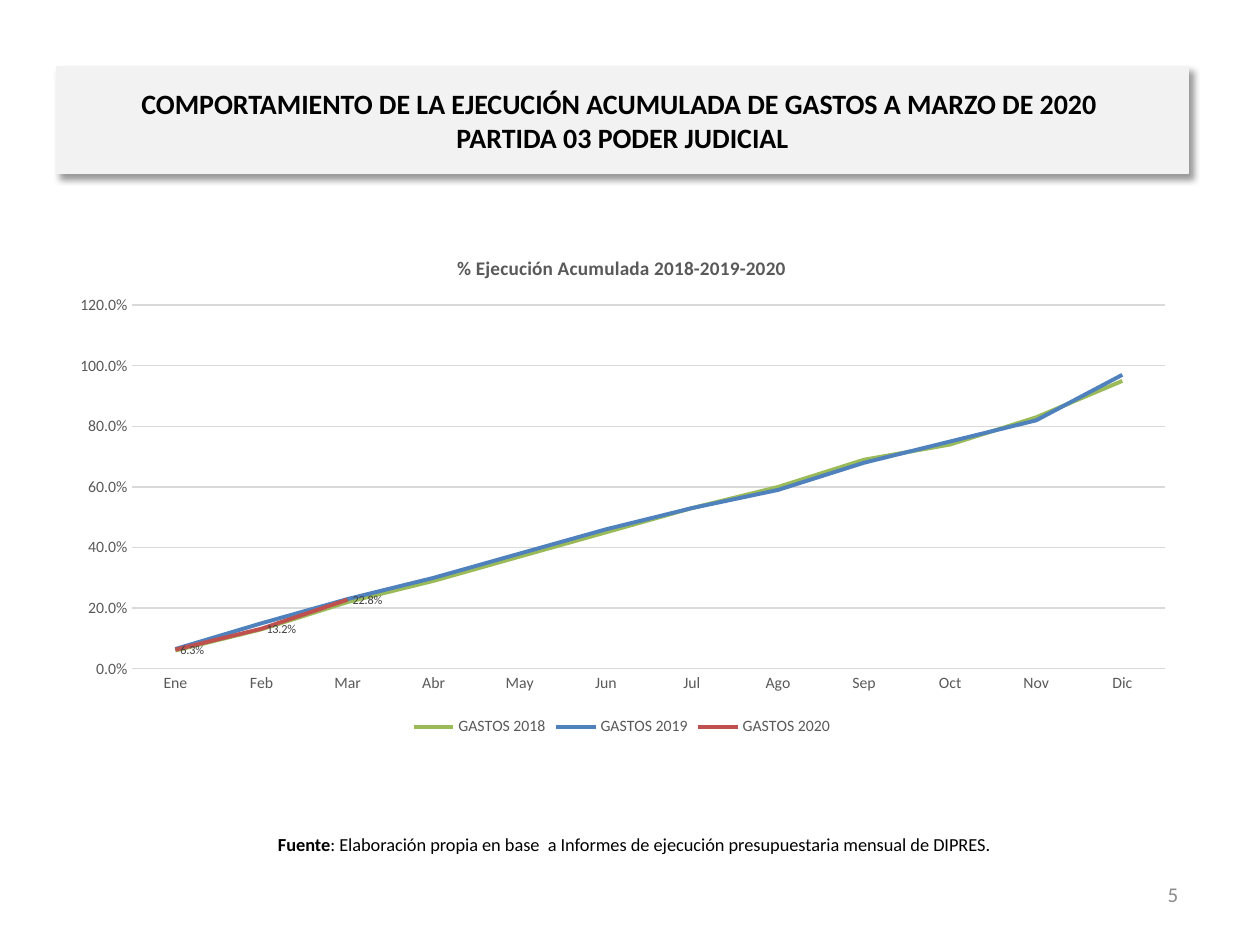
from lxml import etree
from pptx import Presentation
from pptx import util as u
from pptx.chart.data import CategoryChartData
from pptx.dml.color import RGBColor
from pptx.enum import chart as ch, shapes, text
from pptx.oxml import parse_xml
from pptx.oxml.ns import nsdecls


def color(value):
    return RGBColor.from_string(value)


def style(font, size, value, bold=False):
    font.name = "Calibri"
    font.size = u.Pt(size)
    font.bold = bold
    font.color.rgb = color(value)


prs = Presentation()
prs.slide_width, prs.slide_height = u.Inches(10), u.Inches(7.5)
slide = prs.slides.add_slide(prs.slide_layouts[6])

banner = slide.shapes.add_shape(
    shapes.MSO_SHAPE.RECTANGLE, u.Inches(0.45), u.Inches(0.53), u.Inches(8.98), u.Inches(0.85))
banner.shadow.inherit = False
banner.fill.solid()
banner.fill.fore_color.rgb = color("F2F2F2")
banner.line.color.rgb = color("F2F2F2")
banner.line.width = u.Pt(0.75)
effects = banner.fill._xPr.find("{*}effectLst")
effects.append(parse_xml(
    f'<a:outerShdw {nsdecls("a")} blurRad="{u.Pt(4)}" dist="{u.Pt(3)}" dir="2700000" algn="tl" rotWithShape="0">'
    '<a:srgbClr val="000000"><a:alpha val="40000"/></a:srgbClr></a:outerShdw>'))
banner.text_frame.word_wrap = True
banner.text_frame.vertical_anchor = text.MSO_ANCHOR.MIDDLE
heading = banner.text_frame.paragraphs[0]
heading.alignment = text.PP_ALIGN.CENTER
first_line = heading.add_run()
first_line.text = "COMPORTAMIENTO DE LA EJECUCIÓN ACUMULADA DE GASTOS A MARZO DE 2020 "
heading.add_line_break()
second_line = heading.add_run()
second_line.text = "PARTIDA 03 PODER JUDICIAL"
for line in (first_line, second_line):
    style(line.font, 16, "000000", True)

months = ["Ene", "Feb", "Mar", "Abr", "May", "Jun", "Jul", "Ago", "Sep", "Oct", "Nov", "Dic"]
spending = [
    ("GASTOS 2018", "9BBB59",
     [0.06, 0.13, 0.22, 0.29, 0.37, 0.45, 0.53, 0.6, 0.69, 0.74, 0.83, 0.95]),
    ("GASTOS 2019", "4F81BD",
     [0.065, 0.15, 0.23, 0.3, 0.38, 0.46, 0.53, 0.59, 0.68, 0.75, 0.82, 0.97]),
    ("GASTOS 2020", "C0504D", [0.063, 0.132, 0.228] + [None] * 9),
]
data = CategoryChartData(number_format="0.0%")
data.categories = months
for name, _, values in spending:
    data.add_series(name, values)
execution = slide.shapes.add_chart(
    ch.XL_CHART_TYPE.LINE, u.Inches(0.45), u.Inches(1.86), u.Inches(8.97), u.Inches(4.02), data).chart
style(execution.font, 10, "000000")

execution.has_title = True
chart_title = execution.chart_title.text_frame.paragraphs[0].add_run()
chart_title.text = "% Ejecución Acumulada 2018-2019-2020"
style(chart_title.font, 11, "595959", True)
execution.chart_title.include_in_layout = False

execution.has_legend = True
execution.legend.position = ch.XL_LEGEND_POSITION.BOTTOM
execution.legend.include_in_layout = False
style(execution.legend.font, 9, "595959")

for axis in (execution.category_axis, execution.value_axis):
    axis.major_tick_mark = axis.minor_tick_mark = ch.XL_TICK_MARK.NONE
    style(axis.tick_labels.font, 9, "595959")
percent = execution.value_axis
percent.minimum_scale, percent.maximum_scale, percent.major_unit = 0, 1.2, 0.2
percent.tick_labels.number_format = "0.0%"
percent.tick_labels.number_format_is_linked = False
percent.format.line.fill.background()
for rule in (execution.category_axis.format.line, percent.major_gridlines.format.line):
    rule.color.rgb = color("D9D9D9")
    rule.width = u.Pt(0.75)

plot = execution.plots[0]
plot.vary_by_categories = False
for series, (_, hue, _) in zip(plot.series, spending):
    series.smooth = False
    series.marker.style = ch.XL_MARKER_STYLE.NONE
    series.format.line.color.rgb = color(hue)
    series.format.line.width = u.Pt(2.25)
labels = plot.series[2].data_labels
labels.show_value = True
labels.number_format = "0.0%"
labels.number_format_is_linked = False
labels.position = ch.XL_LABEL_POSITION.RIGHT
style(labels.font, 7, "404040")

plot_area = execution._chartSpace.chart.plotArea
for old in plot_area.findall("{*}layout"):
    plot_area.remove(old)
layout = parse_xml(f'<c:layout {nsdecls("c")}><c:manualLayout/></c:layout>')
for tag, value in (("layoutTarget", "inner"), ("xMode", "edge"), ("yMode", "edge"),
                   ("x", "0.067"), ("y", "0.14"), ("w", "0.914"), ("h", "0.718")):
    etree.SubElement(layout[0], "{%s}%s" % (layout.nsmap["c"], tag)).set("val", value)
plot_area.insert(0, layout)

notes = [
    (0.44, 6.5, 9.19, text.PP_ALIGN.CENTER, [
        ("Fuente", 10.5, "000000", True),
        (": Elaboración propia en base  a Informes de ejecución presupuestaria mensual de DIPRES.",
         10.5, "000000", False)]),
    (7.12, 6.9, 2.33, text.PP_ALIGN.RIGHT, [("5", 12, "8C8C8C", False)]),
]
for left, top, width, alignment, pieces in notes:
    frame = slide.shapes.add_textbox(
        u.Inches(left), u.Inches(top), u.Inches(width), u.Inches(0.4)).text_frame
    frame.word_wrap = True
    frame.vertical_anchor = text.MSO_ANCHOR.MIDDLE
    frame.paragraphs[0].alignment = alignment
    for wording, size, hue, bold in pieces:
        run = frame.paragraphs[0].add_run()
        run.text = wording
        style(run.font, size, hue, bold)

prs.save("out.pptx")
